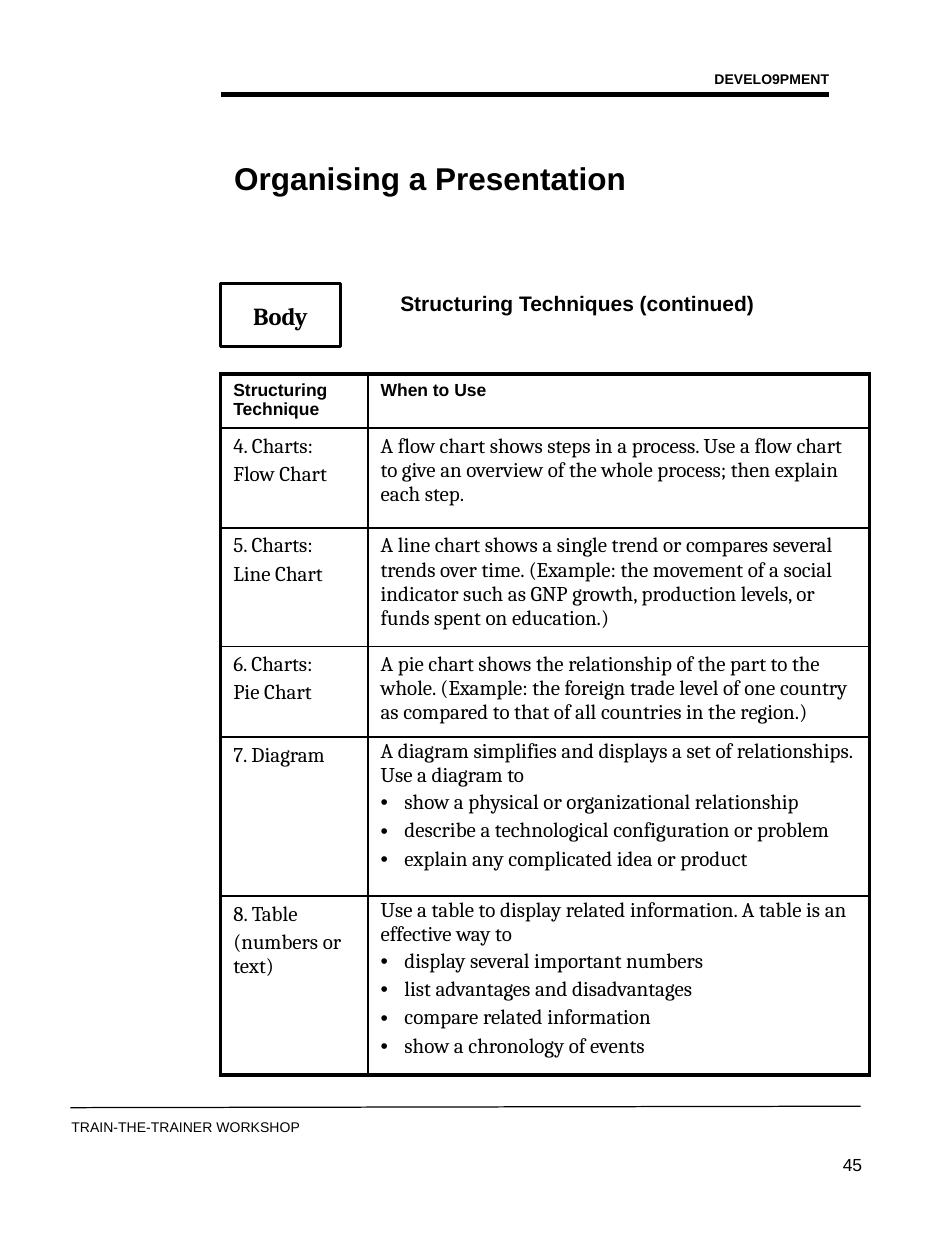
from lxml.etree import SubElement
from pptx import Presentation
from pptx.dml.color import RGBColor
from pptx.enum.shapes import MSO_CONNECTOR, MSO_SHAPE
from pptx.enum.text import MSO_ANCHOR as Anchor, PP_ALIGN as Align
from pptx.oxml.ns import qn
from pptx.util import Cm, Pt

COLOURS = {"ink": "000000"}
INK = RGBColor.from_string(COLOURS["ink"])
SANS, SERIF = "Arial", "Cambria"
OUTER, INNER = 2.25, 1  # table border widths in points
HANG = 0.48  # hanging indent in cm

HEADINGS = ["Structuring Technique", "When to Use"]

# technique lines, height in cm, lead lines, bullets
TECHNIQUES = [
    (["4. Charts:", "Flow Chart"], 2.01,
     ["A flow chart shows steps in a process. Use a flow chart to give an "
      "overview of the whole process; then explain each step."], []),
    (["5. Charts:", "Line Chart"], 2.39,
     ["A line chart shows a single trend or compares several trends over time. "
      "(Example: the movement of a social indicator such as GNP growth, "
      "production levels, or funds spent on education.)"], []),
    (["6. Charts:", "Pie Chart"], 1.83,
     ["A pie chart shows the relationship of the part to the whole. (Example: "
      "the foreign trade level of one country as compared to that of all "
      "countries in the region.)"], []),
    (["7. Diagram"], 3.2,
     ["A diagram simplifies and displays a set of relationships.",
      "Use a diagram to"],
     ["show a physical or organizational relationship",
      "describe a technological configuration or problem",
      "explain any complicated idea or product"]),
    (["8. Table", "(numbers or text)"], 3.61,
     ["Use a table to display related information. A table is an",
      "effective way to"],
     ["display several important numbers",
      "list advantages and disadvantages",
      "compare related information",
      "show a chronology of events"]),
]
HEADING_HEIGHT = 1.09
COLUMN_WIDTHS = [2.97, 10.11]

# text, (left, top, width, height) in cm, format
LABELS = [
    ("DEVELO9PMENT", (11.05, 1.3, 5.92, 0.58),
     dict(size=8, bold=True, align=Align.RIGHT)),
    ("Organising a Presentation", (4.47, 3.38, 10.6, 0.43),
     dict(size=18, bold=True, anchor=Anchor.MIDDLE)),
    ("Structuring Techniques (continued)", (7.82, 5.74, 9.32, 0.76),
     dict(size=12, bold=True)),
    ("TRAIN-THE-TRAINER WORKSHOP", (1.19, 22.43, 8.89, 0.58), dict(size=8)),
    ("45", (13.67, 23.14, 3.96, 1.7), dict(size=10, align=Align.RIGHT)),
]

# x1, y1, x2, y2 in cm, width in points
RULES = [(4.45, 1.9, 16.71, 1.9, 3), (1.42, 22.33, 17.35, 22.3, 0.7)]


def write(frame, *lines, bullets=(), size=12, font=SANS, bold=False,
          align=Align.LEFT, anchor=Anchor.TOP):
    """Fill a text frame; lines that lead into bullets are set tight."""
    frame.word_wrap = True
    frame.vertical_anchor = anchor
    for i, text in enumerate([*lines, *bullets]):
        paragraph = frame.paragraphs[0] if i == 0 else frame.add_paragraph()
        paragraph.alignment = align
        if i:
            paragraph.space_before = Pt(0.2 * size)
        if bullets:
            properties = paragraph._p.get_or_add_pPr()
            properties.set("marL", str(Cm(HANG)))
            properties.set("indent", str(-Cm(HANG)))
            if i < len(lines):
                paragraph.line_spacing = 0.8
            else:
                SubElement(properties, qn("a:buFont"), typeface="Arial")
                SubElement(properties, qn("a:buChar"), char="•")
        run = paragraph.add_run()
        run.text = text
        run.font.size = Pt(size)
        run.font.name = font
        run.font.bold = bold
        run.font.color.rgb = INK


def set_borders(cell, **widths):
    properties = cell._tc.get_or_add_tcPr()
    for side in "LRTB":
        line = SubElement(properties, qn(f"a:ln{side}"), w=str(Pt(widths[side])))
        fill = SubElement(line, qn("a:solidFill"))
        SubElement(fill, qn("a:srgbClr"), val=COLOURS["ink"])


def add_rule(slide, x1, y1, x2, y2, width):
    rule = slide.shapes.add_connector(
        MSO_CONNECTOR.STRAIGHT, Cm(x1), Cm(y1), Cm(x2), Cm(y2))
    rule.line.color.rgb = INK
    rule.line.width = Pt(width)
    SubElement(rule._element.spPr, qn("a:effectLst"))


def add_body_box(slide):
    box = slide.shapes.add_shape(
        MSO_SHAPE.RECTANGLE, Cm(4.45), Cm(5.72), Cm(2.41), Cm(1.27))
    box.shadow.inherit = False
    box.fill.background()
    box.line.color.rgb = INK
    box.line.width = Pt(1.5)
    write(box.text_frame, "Body", size=14, font=SERIF, bold=True,
          align=Align.CENTER, anchor=Anchor.MIDDLE)


def add_techniques(slide):
    heights = [HEADING_HEIGHT] + [height for _, height, _, _ in TECHNIQUES]
    table = slide.shapes.add_table(
        len(heights), len(COLUMN_WIDTHS), Cm(4.45), Cm(7.54),
        Cm(sum(COLUMN_WIDTHS)), Cm(sum(heights))).table
    table.first_row = table.horz_banding = False
    for column, width in zip(table.columns, COLUMN_WIDTHS):
        column.width = Cm(width)
    last_row, last_column = len(heights) - 1, len(COLUMN_WIDTHS) - 1
    for r, height in enumerate(heights):
        table.rows[r].height = Cm(height)
        for c in range(len(COLUMN_WIDTHS)):
            cell = table.cell(r, c)
            set_borders(cell,
                        L=OUTER if c == 0 else INNER,
                        R=OUTER if c == last_column else INNER,
                        T=OUTER if r == 0 else INNER,
                        B=OUTER if r == last_row else INNER)
            cell.fill.background()
    for c, heading in enumerate(HEADINGS):
        write(table.cell(0, c).text_frame, heading, size=10, bold=True)
    for r, (technique, _, usage, bullets) in enumerate(TECHNIQUES, 1):
        write(table.cell(r, 0).text_frame, *technique, font=SERIF)
        write(table.cell(r, 1).text_frame, *usage, bullets=bullets, font=SERIF)


def main():
    deck = Presentation()
    deck.slide_width, deck.slide_height = Cm(19.05), Cm(25.4)
    slide = deck.slides.add_slide(deck.slide_layouts[6])
    for rule in RULES:
        add_rule(slide, *rule)
    add_body_box(slide)
    add_techniques(slide)
    for text, place, style in LABELS:
        label = slide.shapes.add_textbox(*map(Cm, place))
        write(label.text_frame, text, **style)
    deck.save("out.pptx")


if __name__ == "__main__":
    main()
